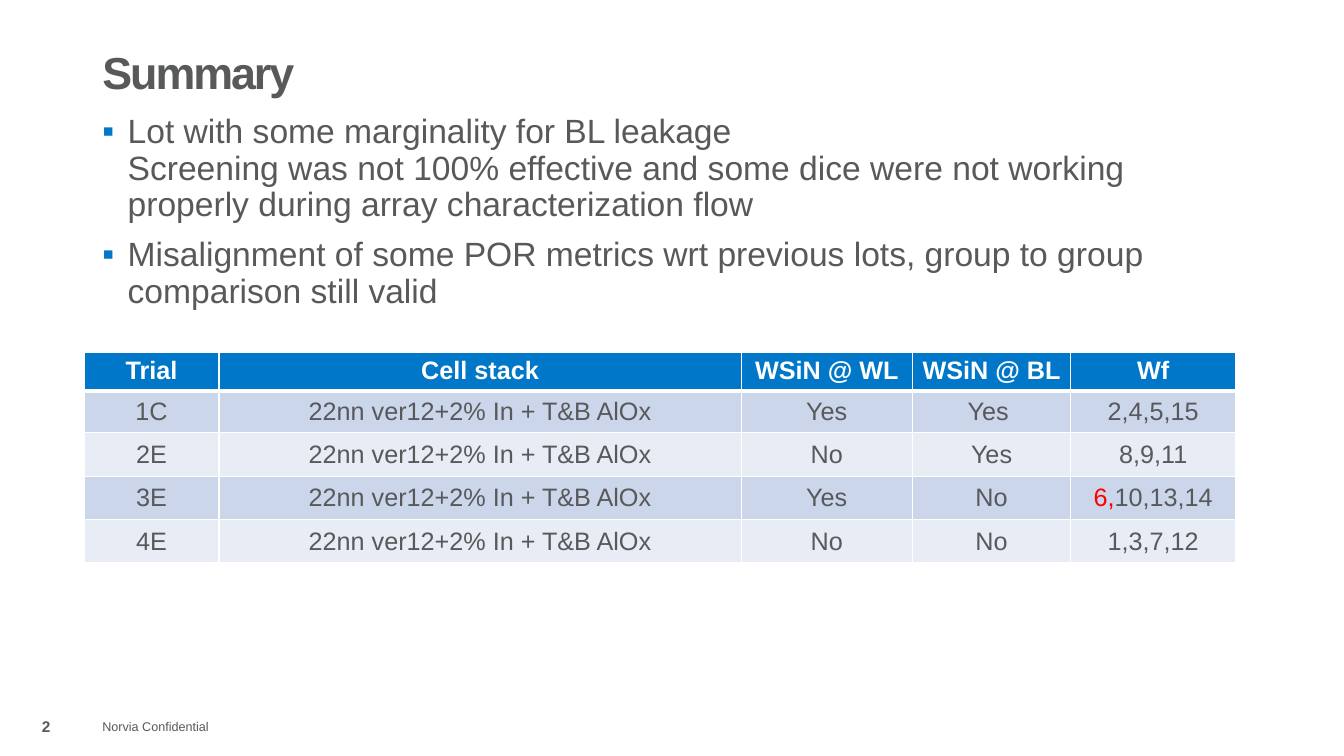
import copy
import dataclasses
import pptx
import pptx.dml.color
import pptx.enum.text
import pptx.oxml
import pptx.oxml.ns
import pptx.util

ALIGN = pptx.enum.text.PP_ALIGN
ANCHOR = pptx.enum.text.MSO_ANCHOR


@dataclasses.dataclass(frozen=True)
class Theme:
    font: str = "Arial"
    gray: str = "58595B"
    blue: str = "0077C8"
    white: str = "FFFFFF"
    red: str = "FF0000"
    bands: tuple = ("CCD6EB", "E7ECF5")
    title_size: int = 32
    body_size: int = 24
    table_size: int = 18
    footer_size: int = 9
    number_size: int = 11


def apply_format(target, values):
    for name, value in values.items():
        setattr(target, name, value)


def rgb(color):
    return pptx.dml.color.RGBColor.from_string(color)


class SlideBuilder:
    def __init__(self, presentation, theme):
        self.theme = theme
        self.slide = presentation.slides.add_slide(presentation.slide_layouts[1])

    def place(self, shape, box):
        names = ("left", "top", "width", "height")
        apply_format(shape, {name: pptx.util.Pt(value) for name, value in zip(names, box)})

    def add_run(self, paragraph, text, size, color=None, bold=False):
        run = paragraph.add_run()
        run.text = text
        apply_format(run.font, {"name": self.theme.font, "size": pptx.util.Pt(size), "bold": bold})
        run.font.color.rgb = rgb(color or self.theme.gray)
        return run

    def format_frame(self, frame, anchor):
        apply_format(frame, {
            "word_wrap": True,
            "auto_size": pptx.enum.text.MSO_AUTO_SIZE.NONE,
            "vertical_anchor": anchor,
        })

    def title(self, text, box):
        shape = self.slide.shapes.title
        self.place(shape, box)
        self.format_frame(shape.text_frame, ANCHOR.MIDDLE)
        paragraph = shape.text_frame.paragraphs[0]
        apply_format(paragraph, {"alignment": ALIGN.LEFT, "line_spacing": 0.9})
        run = self.add_run(paragraph, text, self.theme.title_size, bold=True)
        run.font._element.set("spc", "-150")

    def bullets(self, items, box):
        shape = self.slide.placeholders[1]
        self.place(shape, box)
        frame = shape.text_frame
        self.format_frame(frame, ANCHOR.TOP)
        for index, lines in enumerate(items):
            paragraph = frame.add_paragraph() if index else frame.paragraphs[0]
            apply_format(paragraph, {
                "alignment": ALIGN.LEFT,
                "line_spacing": 0.9,
                "space_before": pptx.util.Pt(10 if index else 0),
            })
            self.bullet_mark(paragraph)
            for number, line in enumerate(lines):
                if number:
                    paragraph.add_line_break()
                run = self.add_run(paragraph, line, self.theme.body_size)
            for line_break in paragraph._p.findall(pptx.oxml.ns.qn("a:br")):
                line_break.append(copy.deepcopy(run.font._element))

    def bullet_mark(self, paragraph):
        properties = paragraph._p.get_or_add_pPr()
        indent = pptx.util.Pt(18)
        properties.set("marL", str(indent))
        properties.set("indent", str(-indent))
        namespace = pptx.oxml.ns.nsdecls("a")
        for markup in (
            f'<a:buClr {namespace}><a:srgbClr val="{self.theme.blue}"/></a:buClr>',
            f'<a:buFont {namespace} typeface="{self.theme.font}"/>',
            f'<a:buChar {namespace} char="▪"/>',
        ):
            properties.append(pptx.oxml.parse_xml(markup))

    def label(self, text, box, size, alignment=ALIGN.LEFT, bold=False):
        shape = self.slide.shapes.add_textbox(0, 0, 0, 0)
        self.place(shape, box)
        self.format_frame(shape.text_frame, ANCHOR.MIDDLE)
        paragraph = shape.text_frame.paragraphs[0]
        paragraph.alignment = alignment
        self.add_run(paragraph, text, size, bold=bold)

    def table(self, rows, left, top, widths, heights):
        box = [pptx.util.Pt(value) for value in (left, top, sum(widths), sum(heights))]
        table = self.slide.shapes.add_table(len(rows), len(widths), *box).table
        for column, width in zip(table.columns, widths):
            column.width = pptx.util.Pt(width)
        for row_index, values in enumerate(rows):
            table.rows[row_index].height = pptx.util.Pt(heights[row_index])
            for column_index, value in enumerate(values):
                self.cell(table.cell(row_index, column_index), value, row_index)

    def cell(self, cell, value, row_index):
        header = row_index == 0
        theme = self.theme
        margins = {"margin_left": 3, "margin_right": 3, "margin_top": 3, "margin_bottom": 3}
        apply_format(cell, {name: pptx.util.Pt(margin) for name, margin in margins.items()})
        cell.vertical_anchor = ANCHOR.TOP if header else ANCHOR.MIDDLE
        cell.fill.solid()
        cell.fill.fore_color.rgb = rgb(theme.blue if header else theme.bands[(row_index - 1) % 2])
        paragraph = cell.text_frame.paragraphs[0]
        paragraph.alignment = ALIGN.CENTER
        base_color = theme.white if header else theme.gray
        parts = [(value, base_color)] if isinstance(value, str) else value
        for text, color in parts:
            self.add_run(paragraph, text, theme.table_size, color, header)
        self.borders(cell, {"L": 1, "R": 1, "T": 3 if row_index == 1 else 1, "B": 3 if header else 1})

    def borders(self, cell, widths):
        properties = cell._tc.get_or_add_tcPr()
        for position, (side, width) in enumerate(widths.items()):
            properties.insert(position, pptx.oxml.parse_xml(
                f'<a:ln{side} {pptx.oxml.ns.nsdecls("a")} w="{pptx.util.Pt(width)}">'
                f'<a:solidFill><a:srgbClr val="{self.theme.white}"/></a:solidFill></a:ln{side}>'
            ))


def main():
    theme = Theme()
    presentation = pptx.Presentation()
    presentation.slide_width = pptx.util.Pt(960)
    presentation.slide_height = pptx.util.Pt(540)
    builder = SlideBuilder(presentation, theme)
    builder.title("Summary", (66, 28.8, 828, 49.7))
    builder.bullets([
        ["Lot with some marginality for BL leakage",
         "Screening was not 100% effective and some dice were not working "
         "properly during array characterization flow"],
        ["Misalignment of some POR metrics wrt previous lots, group to group "
         "comparison still valid"],
    ], (66, 78.5, 828, 372))
    builder.label("Norvia Confidential", (66, 504.7, 109.4, 28.8), theme.footer_size)
    builder.label("2", (0, 504.7, 66, 28.8), theme.number_size, ALIGN.CENTER, True)
    stack = "22nn ver12+2% In + T&B AlOx"
    builder.table([
        ["Trial", "Cell stack", "WSiN @ WL", "WSiN @ BL", "Wf"],
        ["1C", stack, "Yes", "Yes ", "2,4,5,15"],
        ["2E", stack, "No", "Yes", "8,9,11"],
        ["3E", stack, "Yes", "No", [("6,", theme.red), ("10,13,14", theme.gray)]],
        ["4E", stack, "No", "No", "1,3,7,12"],
    ], 60, 252, [96.4, 373, 122.4, 113, 118], [27.4, 29.8, 31, 31, 31])
    presentation.save("out.pptx")


if __name__ == "__main__":
    main()
